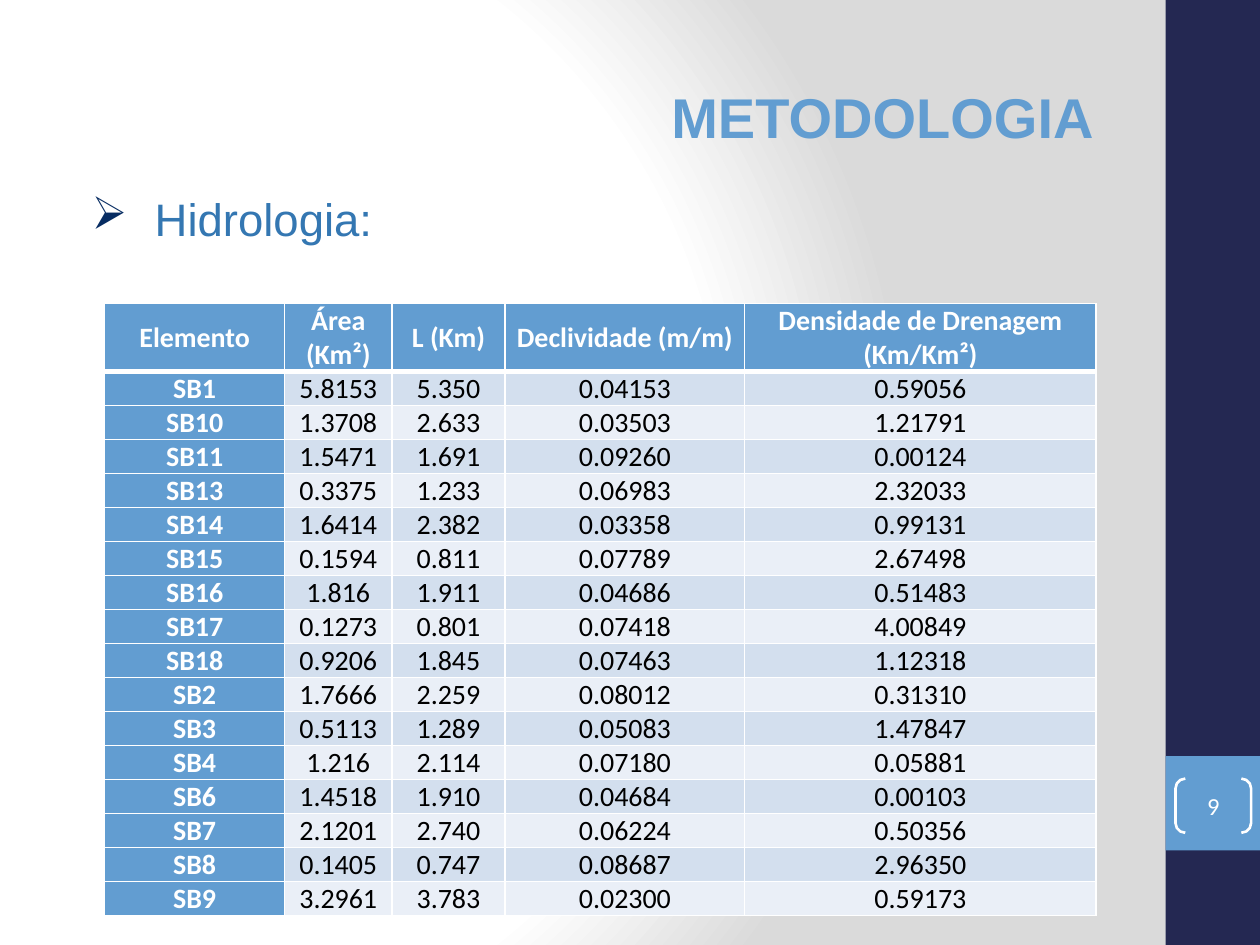
"""Build the hydrology methodology slide with its sub-basin table."""
from lxml import etree
from pptx import Presentation
from pptx.dml.color import RGBColor
from pptx.enum.shapes import MSO_SHAPE
from pptx.enum.text import MSO_ANCHOR, PP_ALIGN
from pptx.oxml import parse_xml
from pptx.oxml.ns import qn
from pptx.util import Inches, Pt

RECTANGLE, BRACKETS = MSO_SHAPE.RECTANGLE, MSO_SHAPE.DOUBLE_BRACKET
MIDDLE, TOP = MSO_ANCHOR.MIDDLE, MSO_ANCHOR.TOP
CENTER, RIGHT, JUSTIFY = PP_ALIGN.CENTER, PP_ALIGN.RIGHT, PP_ALIGN.JUSTIFY
NAMESPACE = "http://schemas.openxmlformats.org/drawingml/2006/main"

COLORS = {
    "white": "FFFFFF", "gray": "DADADA", "black": "000000", "navy": "242852",
    "blue": "629DD1", "heading": "3477B2", "bullet": "072C62",
    "odd": "D3DFEE", "even": "EAEFF7",
}
TITLE = "METODOLOGIA"
TOPIC = "Hidrologia:"
PAGE_NUMBER = "9"
HEADERS = ["Elemento", "Área (Km²)", "L (Km)", "Declividade (m/m)", "Densidade de Drenagem (Km/Km²)"]
BASINS = [
    ("SB1", "5.8153", "5.350", "0.04153", "0.59056"),
    ("SB10", "1.3708", "2.633", "0.03503", "1.21791"),
    ("SB11", "1.5471", "1.691", "0.09260", "0.00124"),
    ("SB13", "0.3375", "1.233", "0.06983", "2.32033"),
    ("SB14", "1.6414", "2.382", "0.03358", "0.99131"),
    ("SB15", "0.1594", "0.811", "0.07789", "2.67498"),
    ("SB16", "1.816", "1.911", "0.04686", "0.51483"),
    ("SB17", "0.1273", "0.801", "0.07418", "4.00849"),
    ("SB18", "0.9206", "1.845", "0.07463", "1.12318"),
    ("SB2", "1.7666", "2.259", "0.08012", "0.31310"),
    ("SB3", "0.5113", "1.289", "0.05083", "1.47847"),
    ("SB4", "1.216", "2.114", "0.07180", "0.05881"),
    ("SB6", "1.4518", "1.910", "0.04684", "0.00103"),
    ("SB7", "2.1201", "2.740", "0.06224", "0.50356"),
    ("SB8", "0.1405", "0.747", "0.08687", "2.96350"),
    ("SB9", "3.2961", "3.783", "0.02300", "0.59173"),
]
COLUMN_WIDTHS = [1.43, 0.85, 0.9, 1.9, 2.79]
HEADER_HEIGHT, ROW_HEIGHT = 0.54, 0.27
GRADIENT_STOPS = [(0, "white"), (75, "white"), (100, "gray")]


def rgb(name):
    return RGBColor.from_string(COLORS[name])


def write(paragraph, text, size, color, font="Calibri", bold=False, align=CENTER):
    paragraph.alignment = align
    run = paragraph.add_run()
    run.text = text
    run.font.size, run.font.name, run.font.bold = Pt(size), font, bold
    run.font.color.rgb = rgb(color)


def paint_background(slide):
    fill = slide.background.fill
    fill.gradient()
    stops = "".join(
        f'<a:gs pos="{position * 1000}"><a:srgbClr val="{COLORS[color]}"/></a:gs>'
        for position, color in GRADIENT_STOPS)
    gradient = parse_xml(
        f'<a:gradFill xmlns:a="{NAMESPACE}" rotWithShape="1"><a:gsLst>{stops}</a:gsLst>'
        '<a:path path="circle"><a:fillToRect l="20000" t="50000" r="100000" b="50000"/>'
        '</a:path></a:gradFill>')
    properties = slide.background._cSld.bg.bgPr
    properties.replace(properties.find(qn("a:gradFill")), gradient)


def add_shape(slide, kind, box, fill=None):
    shape = slide.shapes.add_shape(kind, *map(Inches, box))
    shape.shadow.inherit = False
    if fill:
        shape.fill.solid()
        shape.fill.fore_color.rgb = rgb(fill)
        shape.line.fill.background()
    else:
        shape.fill.background()
    return shape


def add_text_box(slide, box, anchor):
    frame = slide.shapes.add_textbox(*map(Inches, box)).text_frame
    frame.word_wrap = True
    frame.vertical_anchor = anchor
    return frame.paragraphs[0]


def add_bullet(paragraph, character, color):
    properties = paragraph._p.get_or_add_pPr()
    properties.set("marL", str(Inches(0.62)))
    properties.set("indent", str(Inches(-0.5)))
    bullet_color = etree.SubElement(properties, qn("a:buClr"))
    etree.SubElement(bullet_color, qn("a:srgbClr"), val=COLORS[color])
    etree.SubElement(properties, qn("a:buChar"), char=character)


def add_borders(cell, row):
    widths = {"L": 1, "R": 1, "T": 3 if row == 1 else 1, "B": 3 if row == 0 else 1}
    properties = cell._tc.get_or_add_tcPr()
    for index, (side, width) in enumerate(widths.items()):
        properties.insert(index, parse_xml(
            f'<a:ln{side} xmlns:a="{NAMESPACE}" w="{Pt(width)}"><a:solidFill>'
            f'<a:srgbClr val="{COLORS["white"]}"/></a:solidFill></a:ln{side}>'))


def add_basin_table(slide):
    rows = [HEADERS, *BASINS]
    heights = [HEADER_HEIGHT] + [ROW_HEIGHT] * len(BASINS)
    box = (0.83, 2.41, sum(COLUMN_WIDTHS), sum(heights))
    table = slide.shapes.add_table(len(rows), len(HEADERS), *map(Inches, box)).table
    table.horz_banding = False
    table.first_col = True
    for column, width in zip(table.columns, COLUMN_WIDTHS):
        column.width = Inches(width)
    for row, (values, height) in enumerate(zip(rows, heights)):
        table.rows[row].height = Inches(height)
        for column, value in enumerate(values):
            cell = table.cell(row, column)
            heading = row == 0 or column == 0
            cell.margin_left = cell.margin_right = Inches(0.05)
            cell.margin_top = cell.margin_bottom = 0
            cell.vertical_anchor = MIDDLE
            cell.fill.solid()
            cell.fill.fore_color.rgb = rgb("blue" if heading else "odd" if row % 2 else "even")
            add_borders(cell, row)
            write(cell.text_frame.paragraphs[0], value, 16,
                  "white" if heading else "black", bold=heading)


def main():
    presentation = Presentation()
    presentation.slide_width, presentation.slide_height = Inches(10), Inches(7.5)
    slide = presentation.slides.add_slide(presentation.slide_layouts[6])
    paint_background(slide)
    add_shape(slide, RECTANGLE, (9.25, 0, 0.75, 7.5), "navy")
    add_shape(slide, RECTANGLE, (9.25, 6, 0.75, 0.75), "blue")

    title = add_text_box(slide, (0.5, 0.3, 8.28, 1.25), MIDDLE)
    write(title, TITLE, 32, "blue", "Arial", True, RIGHT)

    brackets = add_shape(slide, BRACKETS, (9.33, 6.18, 0.6, 0.43))
    brackets.adjustments[0] = 0.18
    brackets.line.color.rgb = rgb("white")
    brackets.line.width = Pt(1.5)
    frame = brackets.text_frame
    frame.margin_left = frame.margin_right = frame.margin_top = frame.margin_bottom = 0
    frame.vertical_anchor = MIDDLE
    write(frame.paragraphs[0], PAGE_NUMBER, 14, "white")

    topic = add_text_box(slide, (0.51, 1.47, 8.33, 5.38), TOP)
    add_bullet(topic, "➢", "bullet")
    write(topic, TOPIC, 26, "heading", "Arial", align=JUSTIFY)

    add_basin_table(slide)
    presentation.save("out.pptx")


if __name__ == "__main__":
    main()
